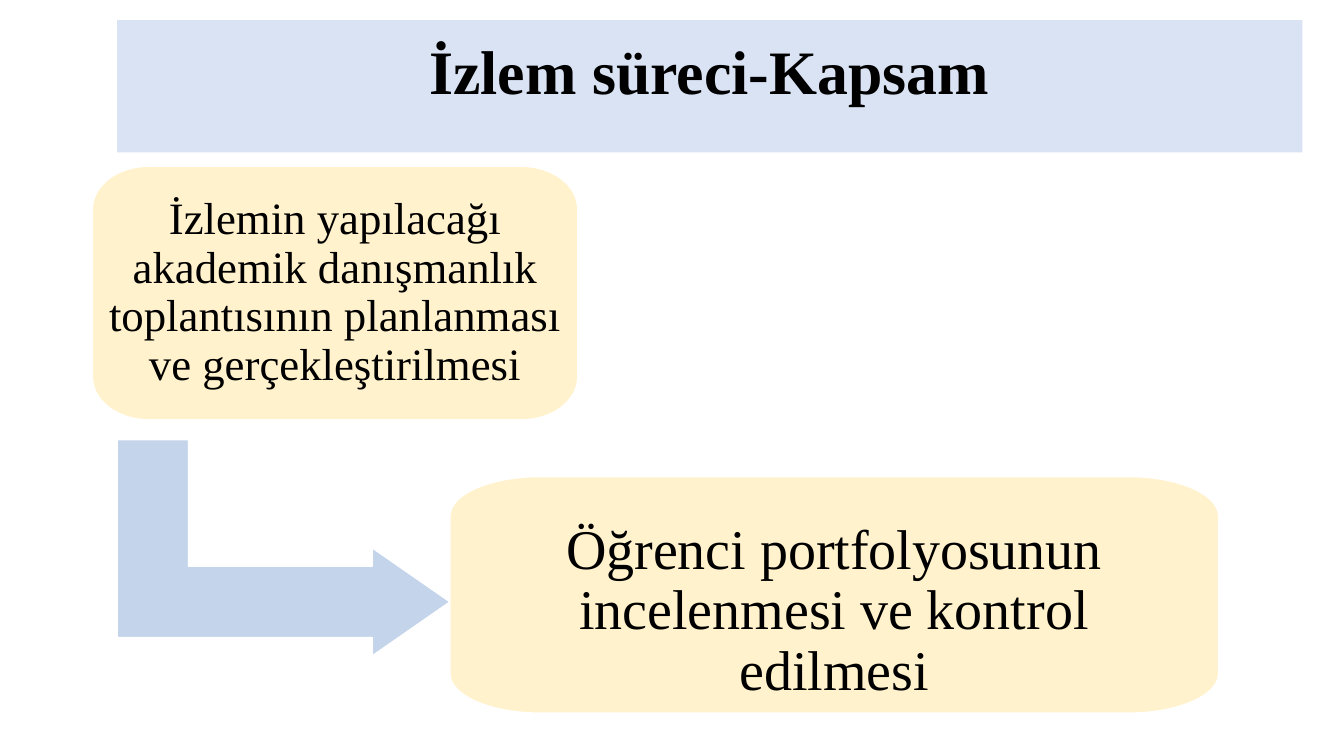
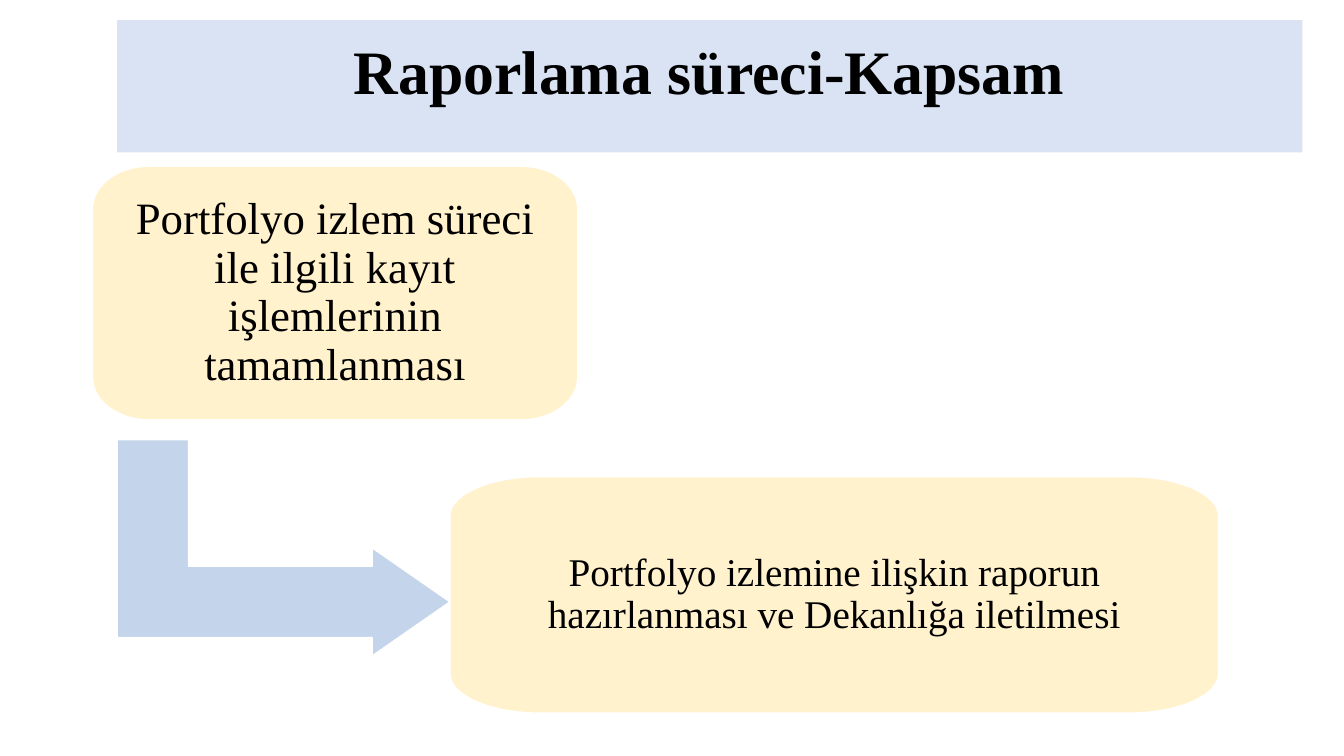
from lxml import etree
from pptx import Presentation
from pptx.dml.color import RGBColor
from pptx.enum.shapes import MSO_SHAPE
from pptx.enum.text import MSO_ANCHOR, PP_ALIGN
from pptx.oxml.ns import qn
from pptx.util import Cm, Pt

RECT = MSO_SHAPE.RECTANGLE
BENT_ARROW = MSO_SHAPE.BENT_UP_ARROW
TOP, MIDDLE = MSO_ANCHOR.TOP, MSO_ANCHOR.MIDDLE
CENTER = PP_ALIGN.CENTER

FONT = "Times New Roman"
BAND, CARD, ARROW = "DAE3F3", "FFF2CC", "C4D5EB"
WHITE, BLACK = "FFFFFF", "000000"
CURVE = 0.55

CARDS = [
    (2.33, 4.19, 12.23, 6.39, 1.42, 1.07),
    (11.34, 12.01, 19.37, 5.96, 2.26, 0.99),
]

SLIDES = [
    ("İzlem süreci-Kapsam",
     "İzlemin yapılacağı akademik danışmanlık toplantısının planlanması ve gerçekleştirilmesi",
     "Öğrenci portfolyosunun incelenmesi ve kontrol edilmesi", 40),
    ("Raporlama süreci-Kapsam",
     "Portfolyo izlem süreci ile ilgili kayıt işlemlerinin tamamlanması",
     "Portfolyo izlemine ilişkin raporun hazırlanması ve Dekanlığa iletilmesi", 28),
]


def paint(sp, fill, line=None):
    sp.shadow.inherit = False
    sp.fill.solid()
    sp.fill.fore_color.rgb = RGBColor.from_string(fill)
    if line:
        sp.line.color.rgb = RGBColor.from_string(line)
        sp.line.width = Pt(1)
    else:
        sp.line.fill.background()


def write(sp, text, size, anchor=MIDDLE, inset=0.4, bold=False):
    tf = sp.text_frame
    tf.word_wrap = True
    tf.vertical_anchor = anchor
    tf.margin_left = tf.margin_right = tf.margin_top = tf.margin_bottom = Cm(inset)
    p = tf.paragraphs[0]
    p.text = text
    p.alignment = CENTER
    p.line_spacing = 0.9
    font = p.runs[0].font
    font.name = FONT
    font.size = Pt(size)
    font.bold = bold
    font.color.rgb = RGBColor.from_string(BLACK)


prs = Presentation()
prs.slide_width, prs.slide_height = Cm(33.87), Cm(19.05)

for title, first, second, second_size in SLIDES:
    s = prs.slides.add_slide(prs.slide_layouts[6])

    band = s.shapes.add_shape(RECT, Cm(2.95), Cm(0.51), Cm(29.87), Cm(3.33))
    paint(band, BAND)
    write(band, title, 44.1, inset=0.13, bold=True)
    band.text_frame.margin_bottom = Cm(0.71)

    arrow = s.shapes.add_shape(BENT_ARROW, Cm(4.42), Cm(9.61), Cm(5.45), Cm(8.39))
    arrow.rotation = 90
    for i, value in enumerate((0.33, 0.25, 0.36)):
        arrow.adjustments[i] = value
    paint(arrow, ARROW, WHITE)

    cards = []
    for x, y, w, h, rx, ry in CARDS:
        points = [(0, ry), (rx, 0), (w - rx, 0), (w, ry),
                  (w, h - ry), (w - rx, h), (rx, h), (0, h - ry)]
        points = [(Cm(px), Cm(py)) for px, py in points]
        corners = [(0, 0), (Cm(w), 0), (Cm(w), Cm(h)), (0, Cm(h))]
        builder = s.shapes.build_freeform(*points[0])
        builder.add_line_segments(points[1:], close=True)
        card = builder.convert_to_shape(Cm(x), Cm(y))
        segments = list(card._element.iter(qn("a:lnTo")))
        for segment, start, end, corner in zip(segments[::2], points[::2], points[1::2], corners):
            segment.tag = qn("a:cubicBezTo")
            for i, anchor in enumerate((start, end)):
                cx, cy = (round(a + CURVE * (c - a)) for a, c in zip(anchor, corner))
                segment.insert(i, etree.Element(qn("a:pt"), x=str(cx), y=str(cy)))
        paint(card, CARD, WHITE)
        cards.append(card)

    write(cards[0], first, 32)
    if second_size == 40:
        box = s.shapes.add_textbox(Cm(12.55), Cm(13), Cm(16.94), Cm(4.88))
        write(box, second, second_size, anchor=TOP, inset=0.13)
    else:
        write(cards[1], second, second_size)

prs.save("out.pptx")
